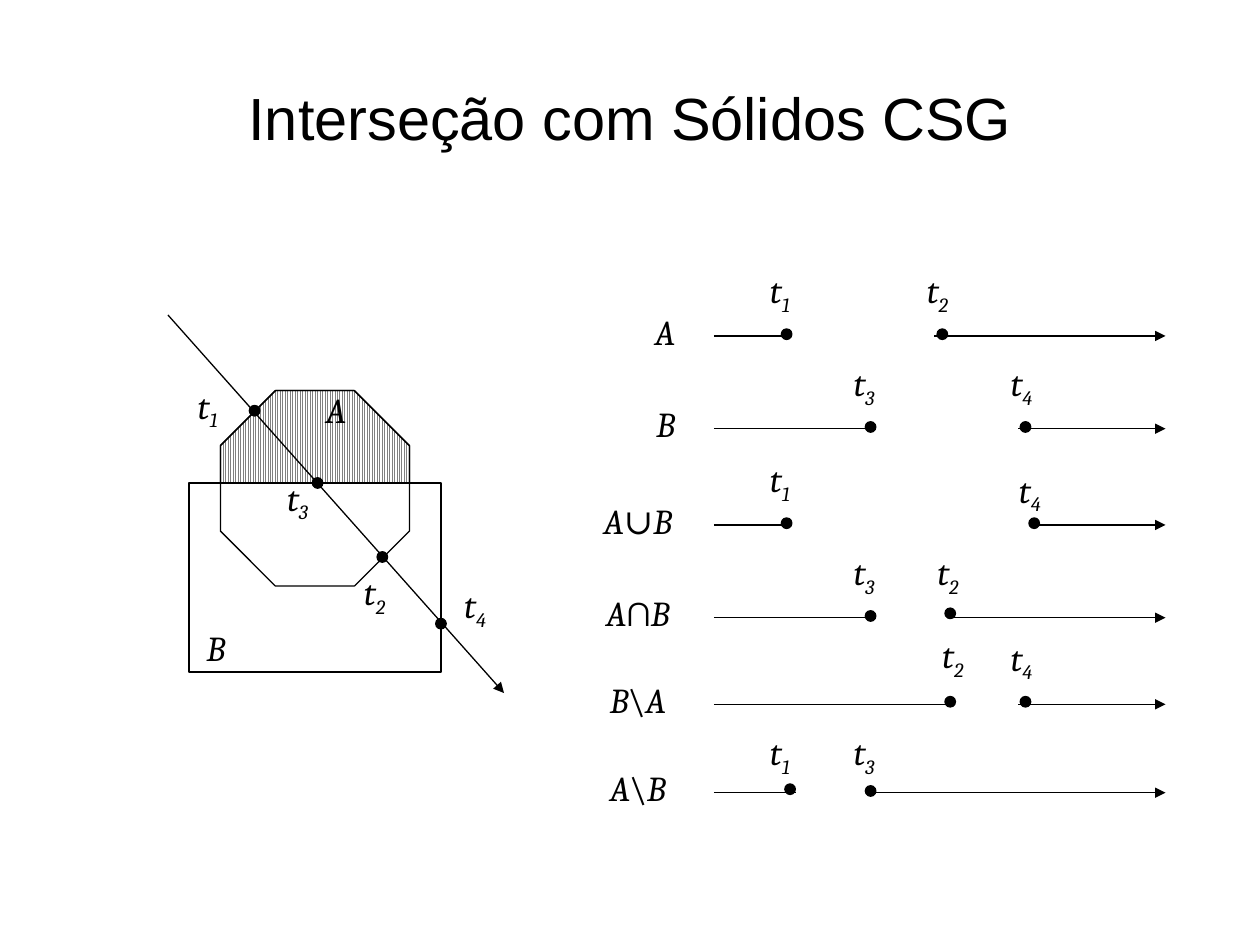
import pptx
import pptx.dml.color
import pptx.enum.dml
import pptx.enum.shapes
import pptx.enum.text
import pptx.oxml.ns
import pptx.util
from lxml import etree

Pt = pptx.util.Pt
SHAPES = pptx.enum.shapes.MSO_SHAPE
BLACK = "000000"
WHITE = "FFFFFF"
GRAY = "808080"
DOT_SIZE = 6
AXIS_START, AXIS_END = 408, 666

# name, name centre x, axis y, gap (start, end, y), points (label, label centre x, label top, dot x, dot y)
ROWS = [
    ("A", 380, 192, (450, 534, 192),
     [("t1", 445.7, 150, 449.5, 191), ("t2", 535.7, 150, 538.5, 191)]),
    ("B", 380.5, 245, (498, 582, 243.5),
     [("t3", 493.7, 203, 497.5, 244), ("t4", 583.7, 203, 586, 244)]),
    ("A∪B", 364.5, 300, (450, 588, 300),
     [("t1", 445.7, 258, 449.5, 299), ("t4", 588.5, 264, 591, 299)]),
    ("A∩B", 364.5, 353, (499, 541.5, 352),
     [("t3", 493.7, 311, 497.5, 352), ("t2", 541.7, 311, 543, 350.5)]),
    ("B\\A", 364.5, 402.5, (546, 582, 401.5),
     [("t2", 544.5, 358.5, 543, 401), ("t4", 583.7, 360, 586, 401)]),
    ("A\\B", 364.5, 453, (455, 497, 452),
     [("t1", 445.7, 414, 451.5, 451), ("t3", 493.7, 414, 497.5, 452)]),
]

SOLID_POINTS = [
    ("t1", 118.7, 216, 145.5, 234.7),
    ("t2", 214, 322.5, 218.5, 318.3),
    ("t3", 170, 268.5, 181.5, 276),
    ("t4", 271.5, 330, 252, 356.4),
]


def color(hex_value):
    return pptx.dml.color.RGBColor.from_string(hex_value)


def style(shape, fill=None):
    shape.shadow.inherit = False
    shape.line.color.rgb = color(BLACK)
    shape.line.width = Pt(0.75)
    if fill:
        shape.fill.solid()
        shape.fill.fore_color.rgb = color(fill)
    else:
        shape.fill.background()


def add_outline(page, kind, left, top, width, height, fill=None):
    shape = page.shapes.add_shape(kind, Pt(left), Pt(top), Pt(width), Pt(height))
    style(shape, fill)
    return shape


def add_dot(page, x, y):
    radius = DOT_SIZE / 2
    add_outline(page, SHAPES.OVAL, x - radius, y - radius, DOT_SIZE, DOT_SIZE, BLACK)


def add_line(page, start, end, hex_value=BLACK, width=0.75, arrow=False):
    line = page.shapes.add_connector(
        pptx.enum.shapes.MSO_CONNECTOR.STRAIGHT, *map(Pt, start + end))
    line.line.color.rgb = color(hex_value)
    line.line.width = Pt(width)
    if arrow:
        outline = line.line._get_or_add_ln()
        etree.SubElement(outline, pptx.oxml.ns.qn("a:tailEnd"), type="triangle")
    properties = line._element.spPr
    etree.SubElement(properties, pptx.oxml.ns.qn("a:effectLst"))


def add_hatching(page, points):
    corners = [(Pt(x), Pt(y)) for x, y in points]
    builder = page.shapes.build_freeform(*corners[0])
    builder.add_line_segments(corners[1:], close=True)
    shape = builder.convert_to_shape()
    style(shape)
    shape.fill.patterned()
    shape.fill.pattern = pptx.enum.dml.MSO_PATTERN.NARROW_VERTICAL
    shape.fill.fore_color.rgb = color(GRAY)
    shape.fill.back_color.rgb = color(WHITE)


def add_title(page, text):
    box = page.shapes.add_textbox(Pt(36), Pt(21.6), Pt(648), Pt(90))
    frame = box.text_frame
    frame.word_wrap = True
    frame.vertical_anchor = pptx.enum.text.MSO_ANCHOR.MIDDLE
    frame.text = text
    para = frame.paragraphs[0]
    para.alignment = pptx.enum.text.PP_ALIGN.CENTER
    font = para.runs[0].font
    font.name = "Arial"
    font.size = Pt(34)
    font.color.rgb = color(BLACK)


def add_label(page, text, center, top):
    width = 57 if len(text) == 3 else 28
    box = page.shapes.add_textbox(Pt(center - width / 2), Pt(top), Pt(width), Pt(31))
    box.text_frame.word_wrap = False
    para = box.text_frame.paragraphs[0]
    para.alignment = pptx.enum.text.PP_ALIGN.CENTER
    for letter in text:
        span = para.add_run()
        span.text = letter
        span.font.name = "Cambria"
        span.font.size = Pt(20)
        span.font.italic = letter.isalnum()
        span.font.color.rgb = color(BLACK)
        if letter.isdigit():
            span.font._element.set("baseline", "-25000")


def add_point(page, text, center, top, x, y):
    add_dot(page, x, y)
    add_label(page, text, center, top)


def add_solids(page):
    left, top, width, height = 126, 223.2, 108, 111.6
    right, cut, base = left + width, 31.6, 276
    add_hatching(page, [
        (left, base), (left, top + cut), (left + cut, top),
        (right - cut, top), (right, top + cut), (right, base)])
    add_line(page, (96, 180), (288, 396), arrow=True)
    octagon = add_outline(page, SHAPES.OCTAGON, left, top, width, height)
    octagon.adjustments[0] = 0.29
    add_outline(page, SHAPES.RECTANGLE, 108, base, 144, 108)
    add_label(page, "A", 192, 218.5)
    add_label(page, "B", 123.5, 354.5)
    for point in SOLID_POINTS:
        add_point(page, *point)


def add_row(page, name, center, y, gap, points):
    gap_start, gap_end, gap_y = gap
    add_line(page, (AXIS_START, y), (AXIS_END, y), arrow=True)
    add_line(page, (gap_start, gap_y), (gap_end, gap_y), WHITE, 4.5)
    add_label(page, name, center, y - 18.3)
    for point in points:
        add_point(page, *point)


def main():
    deck = pptx.Presentation()
    deck.slide_width, deck.slide_height = Pt(720), Pt(540)
    page = deck.slides.add_slide(deck.slide_layouts[6])
    add_title(page, "Interseção com Sólidos CSG")
    add_solids(page)
    for row in ROWS:
        add_row(page, *row)
    deck.save("out.pptx")


if __name__ == "__main__":
    main()
